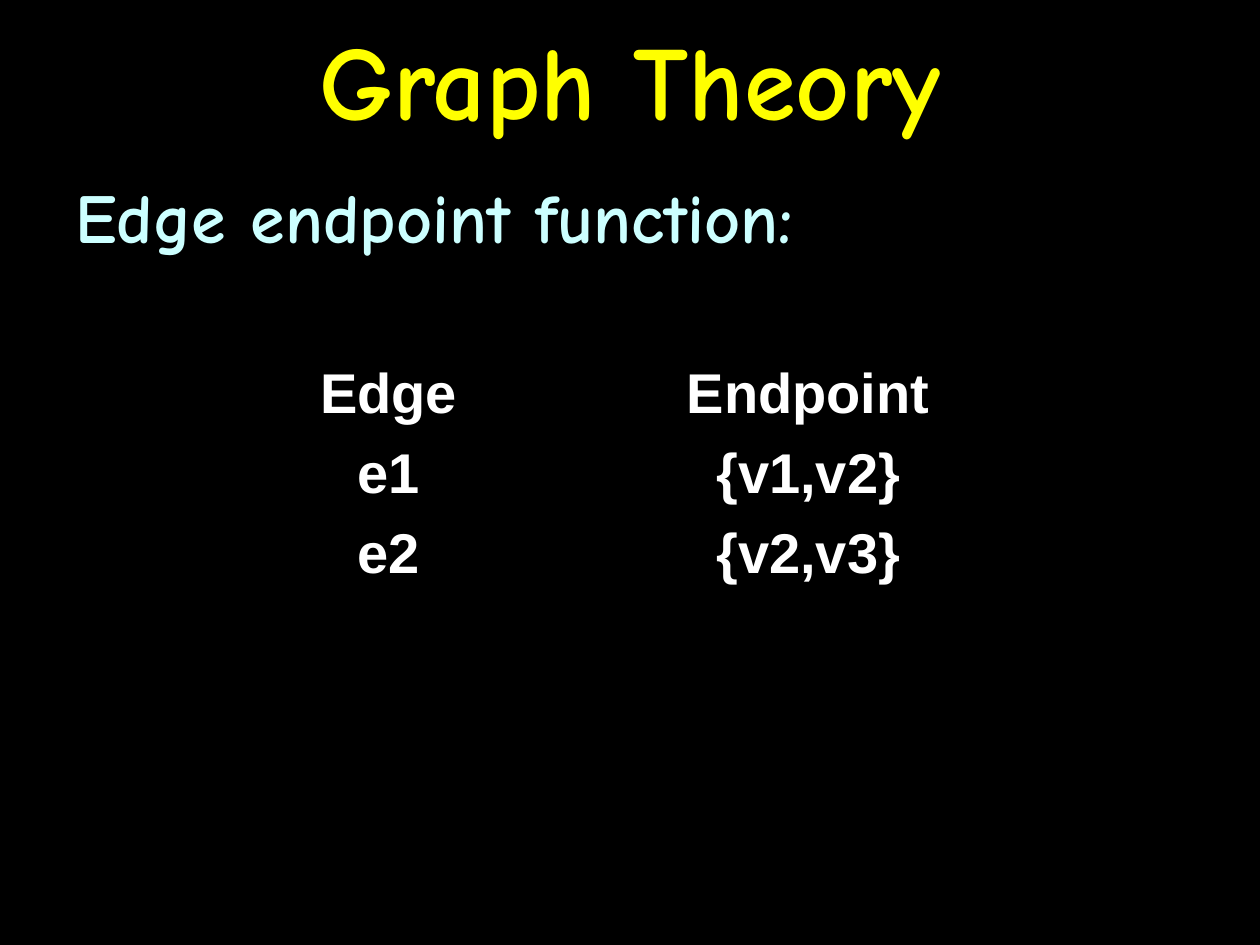
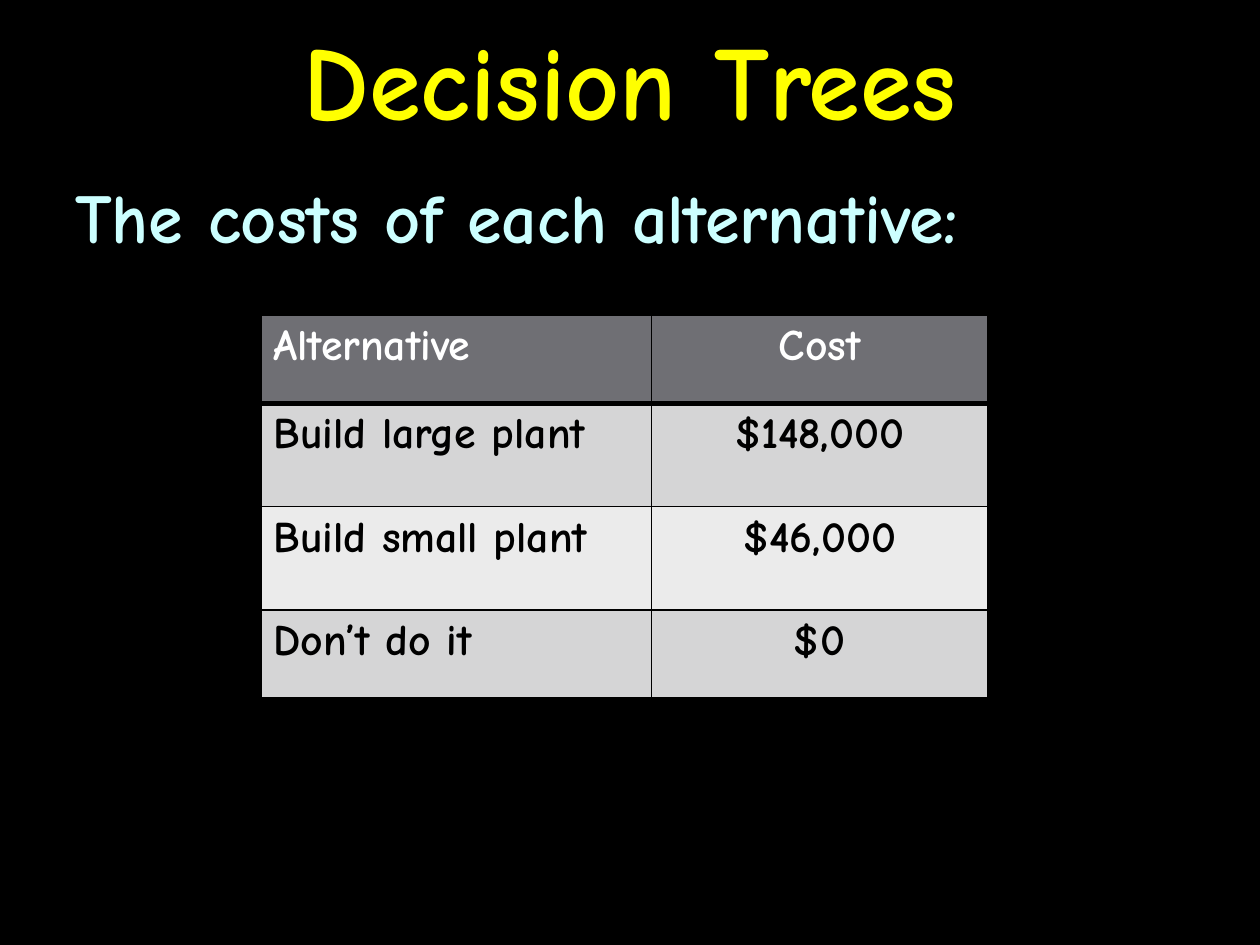
from lxml import etree
from pptx import Presentation
from pptx import util as u
from pptx.dml.color import RGBColor
from pptx.enum import text
from pptx.oxml.ns import qn

BLACK = RGBColor(0x00, 0x00, 0x00)
WHITE = RGBColor(0xFF, 0xFF, 0xFF)
YELLOW = RGBColor(0xFF, 0xFF, 0x00)
PALE_CYAN = RGBColor(0xCC, 0xFF, 0xFF)
DARK_GREY = RGBColor(0x6F, 0x6F, 0x74)
MID_GREY = RGBColor(0xD5, 0xD5, 0xD6)
LIGHT_GREY = RGBColor(0xEB, 0xEB, 0xEB)

HAND, SANS = "Comic Neue", "Arial"
LEFT, CENTER = text.PP_ALIGN.LEFT, text.PP_ALIGN.CENTER
WIDTH, HEIGHT = u.Inches(10), u.Inches(7.5)
TITLE_BOTTOM = HEIGHT // 6
BODY_TOP = u.Inches(1.33)
MARGIN = WIDTH // 20


def style(p, font, size, color, align=LEFT):
    """Set the bold font and alignment of a paragraph."""
    p.alignment = align
    p.font.name, p.font.size, p.font.bold = font, u.Pt(size), True
    p.font.color.rgb = color


def add_text(slide, box, words, size, color, align=LEFT, anchor=text.MSO_ANCHOR.TOP):
    """Add one wrapped line of hand-lettered text."""
    tf = slide.shapes.add_textbox(*box).text_frame
    tf.word_wrap = True
    tf.vertical_anchor = anchor
    p = tf.paragraphs[0]
    p.text = words
    style(p, HAND, size, color, align)


def add_slide(prs, title, lead):
    """Add a black slide with its title and lead line."""
    slide = prs.slides.add_slide(prs.slide_layouts[6])
    fill = slide.background.fill
    fill.solid()
    fill.fore_color.rgb = BLACK
    add_text(slide, (0, 0, WIDTH, TITLE_BOTTOM), title, 60, YELLOW,
             CENTER, text.MSO_ANCHOR.MIDDLE)
    add_text(slide, (MARGIN, BODY_TOP, WIDTH - 2 * MARGIN, HEIGHT - BODY_TOP),
             lead, 40, PALE_CYAN)
    return slide


def set_borders(cell, top, bottom):
    """Draw black cell borders, with the top and bottom widths in points."""
    tc_pr = cell._tc.get_or_add_tcPr()
    for side, width in (("L", 1), ("R", 1), ("T", top), ("B", bottom)):
        ln = etree.SubElement(tc_pr, qn(f"a:ln{side}"), w=str(u.Pt(width)))
        solid = etree.SubElement(ln, qn("a:solidFill"))
        etree.SubElement(solid, qn("a:srgbClr"), val=str(BLACK))


def add_grid(slide, left, top, cols, heights, rows, font, size, fills, inks, aligns):
    """Add a table with a fill and ink per row and an alignment per column."""
    table = slide.shapes.add_table(
        len(rows), len(cols), u.Inches(left), u.Inches(top),
        u.Inches(sum(cols)), u.Inches(sum(heights))).table
    table.horz_banding = False
    for col, width in zip(table.columns, cols):
        col.width = u.Inches(width)
    for i, row in enumerate(rows):
        table.rows[i].height = u.Inches(heights[i])
        for j, words in enumerate(row):
            cell = table.cell(i, j)
            set_borders(cell, 3 if i == 1 else 1, 3 if i == 0 else 1)
            cell.fill.solid()
            cell.fill.fore_color.rgb = fills[i]
            p = cell.text_frame.paragraphs[0]
            p.text = words
            style(p, font, size, inks[i], aligns[j])


def main():
    """Build both slides and save them."""
    prs = Presentation()
    prs.slide_width, prs.slide_height = WIDTH, HEIGHT

    slide = add_slide(prs, "Graph Theory", "Edge endpoint function:")
    edges = [("Edge", "Endpoint"), ("e1", "{v1,v2}"), ("e2", "{v2,v3}")]
    add_grid(slide, 1.42, 2.83, [3.33] * 2, [0.63] * 3, edges, SANS, 32,
             [BLACK] * 3, [WHITE] * 3, [CENTER] * 2)

    slide = add_slide(prs, "Decision Trees", "The costs of each alternative:")
    costs = [("Alternative", "Cost"), ("Build large plant", "$148,000"),
             ("Build small plant", "$46,000"), ("Don’t do it", "$0")]
    add_grid(slide, 2.07, 2.5, [3.1, 2.67], [0.7, 0.82, 0.82, 0.7], costs, HAND, 25,
             [DARK_GREY, MID_GREY, LIGHT_GREY, MID_GREY],
             [WHITE] + [BLACK] * 3, [LEFT, CENTER])

    prs.save("out.pptx")


if __name__ == "__main__":
    main()
